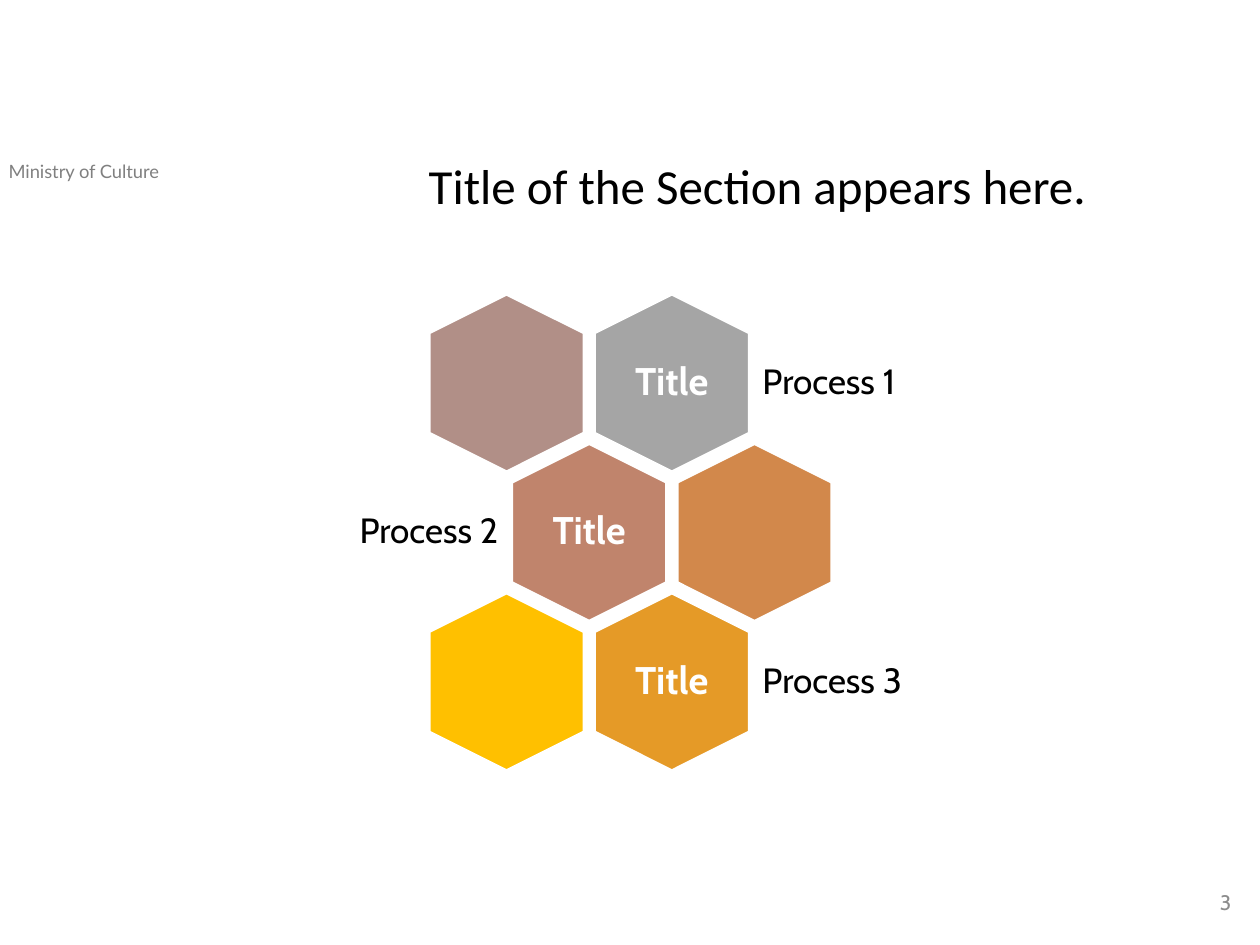
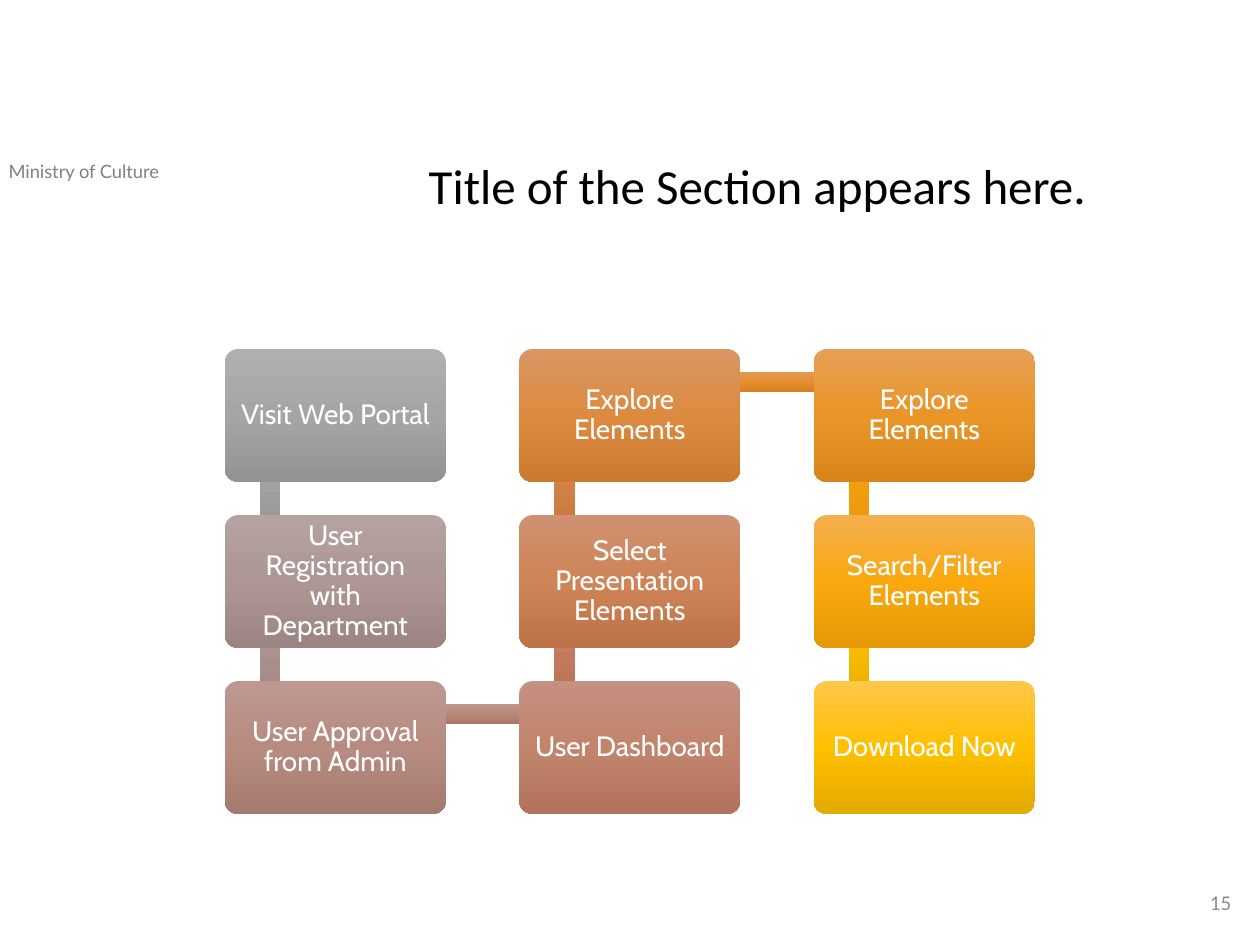
"""Build two process slides: a hexagon cluster and a snaking flow of steps."""
import copy

import pptx
import pptx.dml.color
import pptx.enum.shapes
import pptx.enum.text
import pptx.util


class Theme:
    white, black, mute, foot = "FFFFFF", "000000", "808080", "8C8C8C"
    hexes = ["B18F87", "A5A5A5", "C0846C", "D2884B", "FFC000", "E59A27"]
    steps = [
        ("AFAFAF", "A5A5A5", "939393"), ("B5A3A1", "AD9693", "9B8481"),
        ("BD9891", "B78B80", "A57A6F"), ("C59081", "C2846C", "B1735B"),
        ("CF9172", "CE8456", "BD7347"), ("DA9763", "DC8A40", "CB7A30"),
        ("E6A056", "EA9527", "DA8519"), ("F4AF4E", "FAA80E", "E59906"),
        ("FFC64B", "FFC000", "E3AA00")]
    bars = [
        ("AFAFAF", "A5A5A5", "939393"), ("B6A29E", "AF9691", "9D847F"),
        ("BF958D", "BA877B", "A9766A"), ("C98D7B", "C77E63", "B66E53"),
        ("D59069", "D6854A", "C5763A"), ("E39A5A", "E68F2E", "D68020"),
        ("F2AA4F", "F8A212", "E59307"), ("FFC64B", "FFC000", "E3AA00")]
    body, brand, head = "Cabin", "Lato", "Calibri"
    title, name, label, step, num, tag = 28, 22, 20, 16, 12, 10.5


rgb = pptx.dml.color.RGBColor.from_string
kinds = pptx.enum.shapes.MSO_SHAPE
sides = pptx.enum.text.PP_ALIGN
mids = pptx.enum.text.MSO_ANCHOR

deck = pptx.Presentation()
deck.slide_width = pptx.util.Inches(10)
deck.slide_height = pptx.util.Inches(7.5)
cell = deck.slide_width / 100


def write(words, shape=None, box=None, font=Theme.body, size=12, color=Theme.black,
          bold=False, align=sides.LEFT, anchor=mids.MIDDLE, pad=(1, 0.5), lead=None):
    if shape is None:
        shape = slide.shapes.add_textbox(*[round(v * cell) for v in box])
    frame = shape.text_frame
    frame.word_wrap = True
    frame.vertical_anchor = anchor
    frame.margin_left = frame.margin_right = round(pad[0] * cell)
    frame.margin_top = frame.margin_bottom = round(pad[1] * cell)
    para = frame.paragraphs[0]
    para.alignment = align
    para.line_spacing = lead
    run = para.add_run()
    run.text = words
    run.font.name = font
    run.font.size = pptx.util.Pt(size)
    run.font.bold = bold
    run.font.color.rgb = rgb(color)


def draw(kind, box, fills):
    shape = slide.shapes.add_shape(kind, *[round(v * cell) for v in box])
    shape.shadow.inherit = False
    shape.line.fill.background()
    if len(fills) == 1:
        shape.fill.solid()
        shape.fill.fore_color.rgb = rgb(fills[0])
        return shape
    shape.fill.gradient()
    shape.fill.gradient_angle = 270
    stops = shape.element.xpath(".//a:gsLst")[0]
    stops.append(copy.deepcopy(stops[-1]))
    for stop, place, color in zip(shape.fill.gradient_stops, (0, 0.5, 1), fills):
        stop.position = place
        stop.color.rgb = rgb(color)
    return shape


pages = []
for number, face in (("3", Theme.body), ("15", Theme.head)):
    slide = deck.slides.add_slide(deck.slide_layouts[6])
    pages.append(slide)
    write("Ministry of Culture", box=(-0.3, 12.2, 21.8, 2.8), font=Theme.brand,
          size=Theme.tag, color=Theme.mute, anchor=mids.TOP)
    write("Title of the Section appears here.", box=(27.4, 12.4, 65.4, 7.9),
          font=Theme.head, size=Theme.title, align=sides.CENTER,
          anchor=mids.TOP, lead=0.9)
    write(number, box=(76.2, 69.6, 22.5, 4), font=face, size=Theme.num,
          color=Theme.foot, align=sides.RIGHT)

slide = pages[0]
long, wide = 14, 12.2
named = {1: ("Process 1", sides.LEFT), 2: ("Process 2", sides.RIGHT),
         5: ("Process 3", sides.LEFT)}
for i, color in enumerate(Theme.hexes):
    row, col = divmod(i, 2)
    x = 40.2 + 13.12 * col + 6.56 * (row % 2)
    y = 30.4 + 11.86 * row
    tile = draw(kinds.HEXAGON, (x - long / 2, y - wide / 2, long, wide), [color])
    tile.rotation = 90
    tile.adjustments[0] = 0.25
    tile.line.color.rgb = rgb(Theme.white)
    tile.line.width = pptx.util.Pt(1)
    if i in named:
        words, side = named[i]
        write("Title", box=(x - 4.2, y - 4.8, 8.4, 9.6), size=Theme.name, bold=True,
              color=Theme.white, align=sides.CENTER, pad=(0.9, 0.9), lead=0.9)
        left = x + 6.4 if side == sides.LEFT else x - 21.7
        write(words, box=(left, y - 4.2, 15.3, 8.4), size=Theme.label,
              align=side, pad=(0.8, 0.8), lead=0.9)

slide = pages[1]
steps = ["Visit Web Portal", "User Registration with Department",
         "User Approval from Admin", "User Dashboard",
         "Select Presentation Elements", "Explore Elements",
         "Explore Elements", "Search/Filter Elements", "Download Now"]
spots = []
for i in range(len(steps)):
    col, row = divmod(i, 3)
    row = 2 - row if col % 2 else row
    spots.append((17.84 + 23.37 * col, 27.7 + 13.18 * row))

thick = 1.6
for (x, y), (nextx, nexty), fills in zip(spots, spots[1:], Theme.bars):
    if x == nextx:
        box = (x + 2.8, min(y, nexty) + 2.6, thick, abs(nexty - y))
    else:
        box = (x + 3.6, y + 1.8, nextx - x, thick)
    draw(kinds.RECTANGLE, box, fills)

for words, (x, y), fills in zip(steps, spots, Theme.steps):
    card = draw(kinds.ROUNDED_RECTANGLE, (x, y, 17.56, 10.54), fills)
    card.adjustments[0] = 0.1
    write(words, shape=card, size=Theme.step, color=Theme.white,
          align=sides.CENTER, pad=(0.7, 0.7), lead=0.9)

deck.save("out.pptx")
